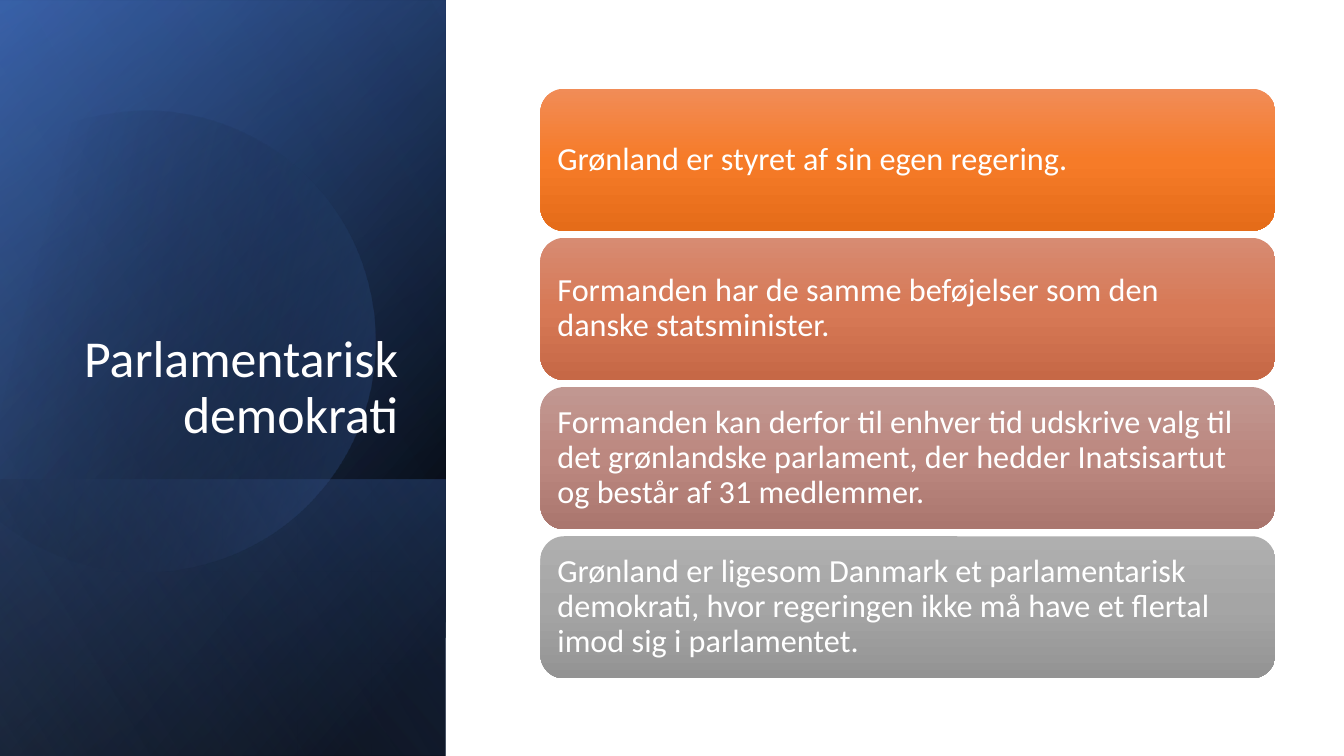
import math
from pptx import Presentation
from pptx.dml.color import RGBColor
from pptx.enum import shapes, text
from pptx.oxml import parse_xml
from pptx.oxml import ns
from pptx.util import Inches, Pt

THEME = {
    "font": "Calibri", "title_size": 37, "card_size": 23,
    "white": "FFFFFF", "black": "000000",
    "blue": "4472C4", "dark_blue": "2F5597", "light_blue": "8FAADC",
    "orange": ("F18C57", "F67B28", "E56C19"),
    "coral": ("D78B72", "D77956", "C66846"),
    "rose": ("C19791", "BC8880", "AA766E"),
    "grey": ("AFAFAF", "A5A5A5", "939393"),
}


def paint(s, stops, angle):
    """Give s a gradient of (position %, colour, opacity %) stops, without line or shadow."""
    s.shadow.inherit = False
    s.line.fill.background()
    s.fill.gradient()
    grad = s._element.spPr.find(ns.qn("a:gradFill"))
    items = "".join(
        f'<a:gs pos="{pos * 1000}"><a:srgbClr val="{colour}">'
        + (f'<a:alpha val="{opacity * 1000}"/>' if opacity < 100 else "")
        + '</a:srgbClr></a:gs>'
        for pos, colour, opacity in stops)
    new = parse_xml(
        f'<a:gradFill {ns.nsdecls("a")} rotWithShape="1"><a:gsLst>{items}</a:gsLst>'
        f'<a:lin ang="{angle * 60000}" scaled="0"/></a:gradFill>')
    grad.getparent().replace(grad, new)


def write(s, content, *, size, align, anchor, inset=0.05):
    tf = s.text_frame
    tf.word_wrap = True
    tf.auto_size = text.MSO_AUTO_SIZE.NONE
    tf.vertical_anchor = anchor
    tf.margin_left = tf.margin_right = Inches(0.1)
    tf.margin_top = tf.margin_bottom = Inches(inset)
    p = tf.paragraphs[0]
    p.alignment = align
    p.line_spacing = 0.9
    r = p.add_run()
    r.text = content
    r.font.name = THEME["font"]
    r.font.size = Pt(size)
    r.font.color.rgb = RGBColor.from_string(THEME["white"])


prs = Presentation()
prs.slide_width, prs.slide_height = Inches(13.33), Inches(7.5)
slide = prs.slides.add_slide(prs.slide_layouts[5])
sp = slide.shapes
black, blue = THEME["black"], THEME["blue"]

# Side panel: quarter-turned rectangles, with a clipped disc below the last one
panel = (-1.54, 1.54, 7.5, 4.42)
layers = [
    (panel, [(8, black, 100), (100, THEME["dark_blue"], 100)], 50),
    ((-1.54, 1.55, 7.5, 4.42), [(0, black, 0), (99, blue, 46)], 30),
    ((0.84, 3.92, 2.74, 4.42), [(2, blue, 29), (100, black, 30)], 130),
    (panel, [(0, black, 0), (99, THEME["light_blue"], 11)], 120),
]
for box, stops, angle in layers:
    front = sp.add_shape(shapes.MSO_SHAPE.RECTANGLE, *map(Inches, box))
    front.rotation = 90
    front._element.spPr.get_or_add_xfrm().set("flipH", "1")
    paint(front, stops, angle)

# Disc: the outline is turned back about its centre, so the shape can carry the tilt
left, top, width, height = -0.55, 1.06, 4.27, 4.57
tilt = 16.1
cos, sin = math.cos(math.radians(tilt)), math.sin(math.radians(tilt))
disc_path = [
    ("moveTo", [(1.49, 1.1)]),
    ("cubicBezTo", [(2.46, 1.12), (3.35, 1.77), (3.63, 2.75)]),
    ("cubicBezTo", [(3.98, 3.97), (3.28, 5.23), (2.07, 5.58)]),
    ("cubicBezTo", [(1.31, 5.8), (0.53, 5.61), (-0.03, 5.14)]),
    ("lnTo", [(-0.15, 5.03)]),
    ("lnTo", [(-0.15, 1.75)]),
    ("lnTo", [(0, 1.61)]),
    ("cubicBezTo", [(0.23, 1.42), (0.5, 1.28), (0.8, 1.19)]),
    ("cubicBezTo", [(1.03, 1.13), (1.26, 1.1), (1.49, 1.1)]),
]
commands = ""
for command, points in disc_path:
    commands += f"<a:{command}>"
    for x, y in points:
        dx, dy = x - left - width / 2, y - top - height / 2
        px = Inches(width / 2 + dx * cos - dy * sin)
        py = Inches(height / 2 + dx * sin + dy * cos)
        commands += f'<a:pt x="{px}" y="{py}"/>'
    commands += f"</a:{command}>"
builder = sp.build_freeform(Inches(left), Inches(top))
builder.add_line_segments([(Inches(left + width), Inches(top + height))])
disc = builder.convert_to_shape()
path_list = disc._element.spPr.find(ns.qn("a:custGeom")).find(ns.qn("a:pathLst"))
path_list.getparent().replace(path_list, parse_xml(
    f'<a:pathLst {ns.nsdecls("a")}><a:path w="{Inches(width)}" h="{Inches(height)}">'
    f'{commands}<a:close/></a:path></a:pathLst>'))
disc.rotation = 360 - tilt
paint(disc, [(29, black, 0), (100, blue, 43)], 30)
front._element.addprevious(disc._element)

title = sp.title
title.left, title.top, title.width, title.height = map(Inches, (0.64, 1.84, 3.41, 2.62))
write(title, "Parlamentarisk demokrati", size=THEME["title_size"],
      align=text.PP_ALIGN.RIGHT, anchor=text.MSO_ANCHOR.BOTTOM)
front._element.addnext(title._element)

cards = [
    ("orange", "Grønland er styret af sin egen regering."),
    ("coral", "Formanden har de samme beføjelser som den danske statsminister."),
    ("rose", "Formanden kan derfor til enhver tid udskrive valg til det grønlandske "
             "parlament, der hedder Inatsisartut og består af 31 medlemmer."),
    ("grey", "Grønland er ligesom Danmark et parlamentarisk demokrati, hvor regeringen "
             "ikke må have et flertal imod sig i parlamentet."),
]
pad = 0.07
for i, (tone, content) in enumerate(cards):
    x, y, w, h = 5.36, 0.88 + 1.48 * i, 7.29, 1.41
    s = sp.add_shape(shapes.MSO_SHAPE.ROUNDED_RECTANGLE, *map(Inches, (x, y, w, h)))
    paint(s, [(50 * n, colour, 100) for n, colour in enumerate(THEME[tone])], 90)
    label = sp.add_textbox(*map(Inches, (x + pad, y + pad, w - 2 * pad, h - 2 * pad)))
    write(label, content, size=THEME["card_size"], inset=0.1,
          align=text.PP_ALIGN.LEFT, anchor=text.MSO_ANCHOR.MIDDLE)

prs.save("out.pptx")
